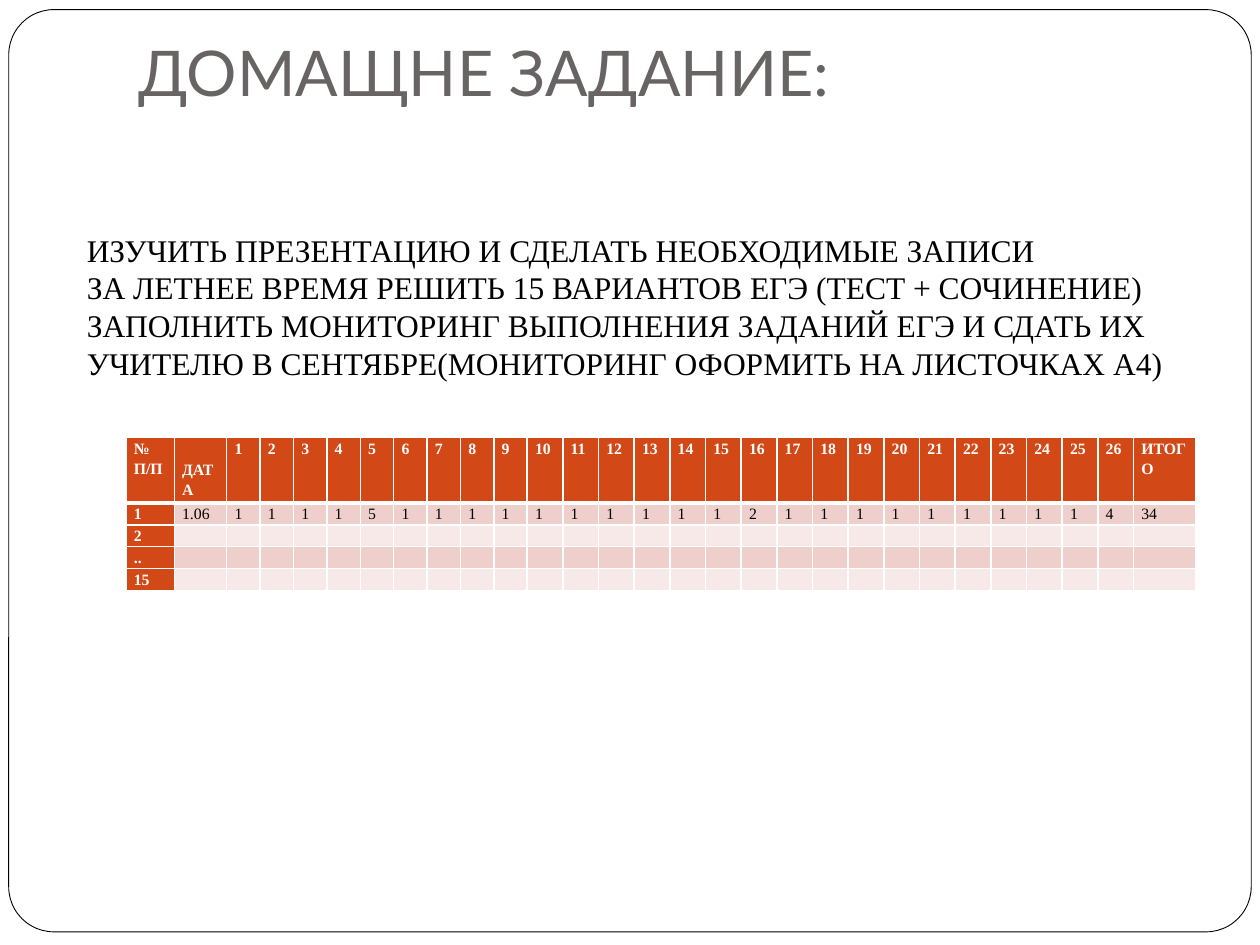
from lxml import etree
from pptx import Presentation
from pptx.dml.color import RGBColor
from pptx.enum.shapes import MSO_SHAPE
from pptx.enum.text import MSO_ANCHOR, MSO_AUTO_SIZE, PP_ALIGN
from pptx.oxml.ns import qn
from pptx.util import Pt

ROUNDED = MSO_SHAPE.ROUNDED_RECTANGLE
BOTTOM, TOP = MSO_ANCHOR.BOTTOM, MSO_ANCHOR.TOP
LEFT = PP_ALIGN.LEFT
NO_AUTOFIT = MSO_AUTO_SIZE.NONE

WHITE, BLACK, GREY = "FFFFFF", "000000", "696464"
ORANGE, DARK_BAND, LIGHT_BAND = "D34817", "EFCFCC", "F7E9E8"


def color(value):
    return RGBColor.from_string(value)


def apply_format(target, values):
    for name, value in values.items():
        setattr(target, name, value)


class SlideBuilder:
    """Holds the style and the current slide; lengths are in points."""

    title_font = {"name": "Lato", "size": Pt(36), "bold": False}
    body_font = {"name": "Times New Roman", "size": Pt(18)}
    cell_font = {"name": "Times New Roman", "size": Pt(9)}
    cell_margins = {"margin_left": Pt(4.5), "margin_right": Pt(4.5),
                    "margin_top": 0, "margin_bottom": 0}

    def __init__(self, presentation):
        self.slide = presentation.slides.add_slide(presentation.slide_layouts[5])

    def place(self, shape, left, top, width, height):
        apply_format(shape, {"left": Pt(left), "top": Pt(top),
                             "width": Pt(width), "height": Pt(height)})

    def fill_text(self, frame, lines, font, text_color, **paragraph_format):
        frame.text = "\n".join(lines)
        for paragraph in frame.paragraphs:
            apply_format(paragraph, {"alignment": LEFT, **paragraph_format})
            for run in paragraph.runs:
                apply_format(run.font, font)
                run.font.color.rgb = color(text_color)

    def frame(self, box, radius):
        shape = self.slide.shapes.add_shape(ROUNDED, *map(Pt, box))
        shape.adjustments[0] = radius
        shape.shadow.inherit = False
        shape.fill.solid()
        shape.fill.fore_color.rgb = color(WHITE)
        shape.line.color.rgb = color(BLACK)
        shape.line.width = Pt(0.5)
        # Send the frame behind the title
        self.slide.shapes.element.insert(2, shape.element)

    def title(self, text, box, bottom_margin):
        title = self.slide.shapes.title
        self.place(title, *box)
        self.fill_text(title.text_frame, [text], self.title_font, GREY)
        apply_format(title.text_frame, {
            "auto_size": NO_AUTOFIT, "word_wrap": True, "vertical_anchor": BOTTOM,
            "margin_bottom": Pt(bottom_margin)})

    def text(self, lines, box):
        frame = self.slide.shapes.add_textbox(*map(Pt, box)).text_frame
        frame.word_wrap = True
        self.fill_text(frame, lines, self.body_font, BLACK)

    def border(self, cell, side, width):
        line = etree.SubElement(cell._tc.get_or_add_tcPr(), qn(f"a:{side}"),
                                w=str(Pt(width)))
        fill = etree.SubElement(line, qn("a:solidFill"))
        etree.SubElement(fill, qn("a:srgbClr"), val=WHITE)

    def cell(self, cell, text, fill, header, borders):
        for side, width in borders.items():
            self.border(cell, side, width)
        cell.fill.solid()
        cell.fill.fore_color.rgb = color(fill)
        apply_format(cell, {**self.cell_margins, "vertical_anchor": TOP})
        font = {**self.cell_font, "bold": header}
        self.fill_text(cell.text_frame, text.split("\n"), font,
                       WHITE if header else BLACK, line_spacing=1.15)
        if not text:
            # Keep empty rows as low as the filled ones
            etree.SubElement(cell.text_frame.paragraphs[0]._p, qn("a:endParaRPr"),
                             sz=str(int(self.cell_font["size"].pt * 100)))

    def table(self, rows, left, top, widths, heights):
        table = self.slide.shapes.add_table(
            len(rows), len(widths), Pt(left), Pt(top),
            Pt(sum(widths)), Pt(sum(heights))).table
        for column, width in zip(table.columns, widths):
            column.width = Pt(width)
        for row, height in zip(table.rows, heights):
            row.height = Pt(height)
        for i, values in enumerate(rows):
            borders = {"lnL": 1, "lnR": 1, "lnT": 3 if i == 1 else 1,
                       "lnB": 3 if i == 0 else 1}
            for j, text in enumerate(values):
                header = i == 0 or j == 0
                band = DARK_BAND if i % 2 else LIGHT_BAND
                self.cell(table.cell(i, j), text, ORANGE if header else band,
                          header, borders)
        return table


def main():
    presentation = Presentation()
    presentation.slide_width, presentation.slide_height = Pt(720), Pt(540)
    builder = SlideBuilder(presentation)

    # Page frame, title and assignment
    builder.frame((5, 5.5, 710, 527), radius=0.049)
    builder.title("ДОМАЩНЕ ЗАДАНИЕ:", (72, 21.6, 612, 90), bottom_margin=49)
    builder.text([
        "ИЗУЧИТЬ ПРЕЗЕНТАЦИЮ И СДЕЛАТЬ НЕОБХОДИМЫЕ ЗАПИСИ",
        "ЗА ЛЕТНЕЕ ВРЕМЯ РЕШИТЬ 15 ВАРИАНТОВ ЕГЭ (ТЕСТ + СОЧИНЕНИЕ)",
        "ЗАПОЛНИТЬ МОНИТОРИНГ ВЫПОЛНЕНИЯ ЗАДАНИЙ ЕГЭ И СДАТЬ ИХ УЧИТЕЛЮ "
        "В СЕНТЯБРЕ(МОНИТОРИНГ ОФОРМИТЬ НА ЛИСТОЧКАХ А4)",
    ], (42.5, 128.2, 669, 94.5))

    # Monitoring table: one column per exam task
    tasks = range(1, 27)
    special_scores = {5: "5", 16: "2", 26: "4"}
    scores = [special_scores.get(task, "1") for task in tasks]
    rows = [["№\nП/П", "ДАТА", *map(str, tasks), "ИТОГО"],
            ["1", "1.06", *scores, "34"]]
    rows += [[label] + [""] * 28 for label in ("2", "..", "15")]
    widths = [27.6, 30] + [19.1] * 9 + [20.4] * 17 + [35.7]
    table = builder.table(rows, 72, 250, widths, [37.5] + [12.4] * 4)
    # The date heading starts on the second line
    table.cell(0, 1).margin_top = Pt(12)

    presentation.save("out.pptx")


if __name__ == "__main__":
    main()
